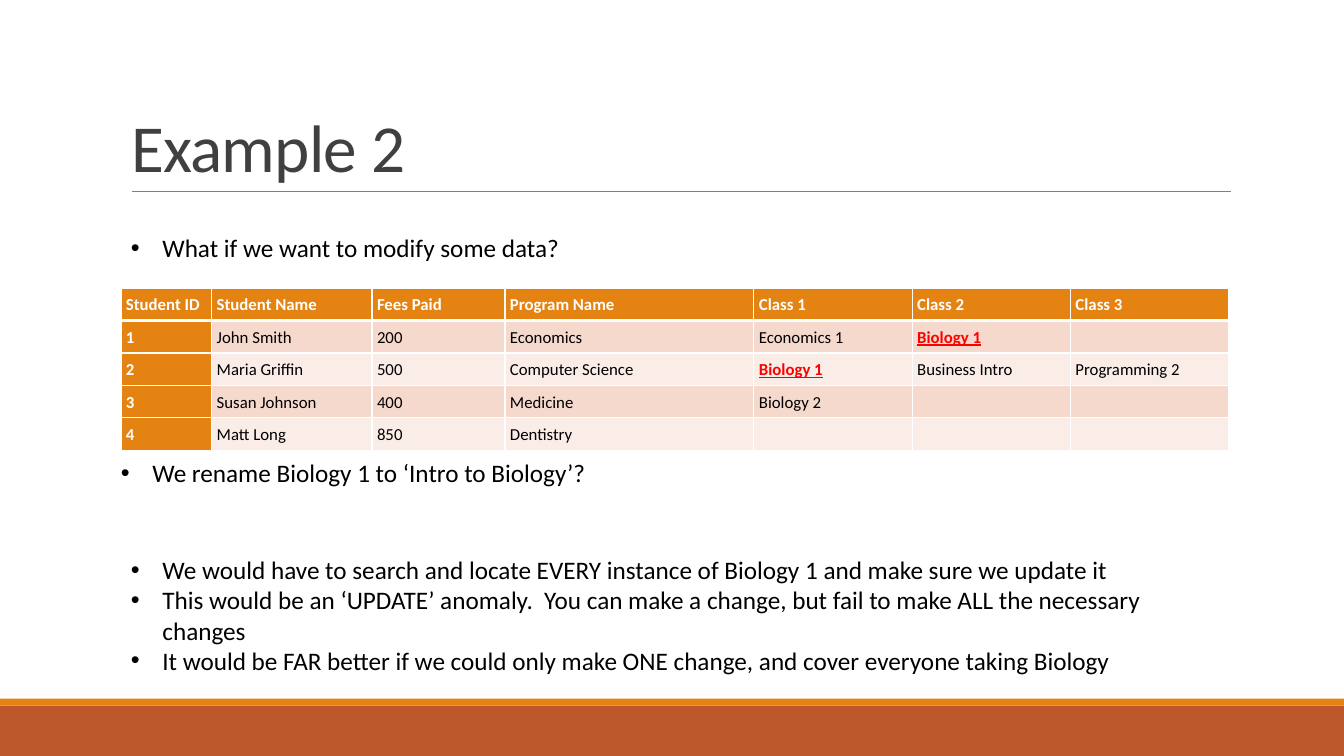
import dataclasses

import lxml.etree
import pptx
import pptx.dml.color
import pptx.enum.shapes
import pptx.enum.text
import pptx.oxml.ns
import pptx.util

Pt = pptx.util.Pt
qn = pptx.oxml.ns.qn
TEXT = pptx.enum.text


@dataclasses.dataclass(frozen=True)
class Theme:
    face: str = "Calibri"
    title: int = 48
    body: int = 18
    cell: int = 12
    black: str = "000000"
    white: str = "FFFFFF"
    dark: str = "404040"
    rule: str = "808080"
    alert: str = "FF0000"
    orange: str = "E48312"
    rust: str = "BD582C"
    bands: tuple = ("F5D9CC", "FAEDE7")


THEME = Theme()
WIDTH, HEIGHT = 960, 540
LEFT = 86.4
COLS = (64.8, 114.5, 95, 177.8, 113.1, 113.1, 113.1)
ROW = 23.2
STUDENTS = (
    ("Student ID", "Student Name", "Fees Paid", "Program Name",
     "Class 1", "Class 2", "Class 3"),
    ("1", "John Smith", "200", "Economics", "Economics 1", "Biology 1", ""),
    ("2", "Maria Griffin", "500", "Computer Science",
     "Biology 1", "Business Intro", "Programming 2"),
    ("3", "Susan Johnson", "400", "Medicine", "Biology 2", "", ""),
    ("4", "Matt Long", "850", "Dentistry", "", "", ""),
)
RENAMED = "Biology 1"
# left, top, width, height, lines
NOTES = (
    (LEFT, 162.7, 785, 29, ("What if we want to modify some data?",)),
    (79.2, 323.3, 785, 51, ("We rename Biology 1 to ‘Intro to Biology’?",)),
    (LEFT, 392.4, 785, 116.6, (
        "We would have to search and locate EVERY instance of Biology 1 "
        "and make sure we update it",
        "This would be an ‘UPDATE’ anomaly.  You can make a change, "
        "but fail to make ALL the necessary changes",
        "It would be FAR better if we could only make ONE change, "
        "and cover everyone taking Biology",
    )),
)


def rgb(code):
    return pptx.dml.color.RGBColor.from_string(code)


def assign(item, values):
    for name, value in values.items():
        setattr(item, name, value)


def paint(fill, color):
    fill.solid()
    fill.fore_color.rgb = rgb(color)


def write(para, text, size, color, **style):
    run = para.add_run()
    run.text = text
    assign(run.font, {"name": THEME.face, "size": Pt(size), **style})
    run.font.color.rgb = rgb(color)
    return run


def add_bar(slide, top, height, color):
    bar = slide.shapes.add_shape(
        pptx.enum.shapes.MSO_SHAPE.RECTANGLE,
        Pt(0), Pt(top), Pt(WIDTH), Pt(height))
    bar.shadow.inherit = False
    paint(bar.fill, color)
    bar.line.fill.background()


def add_rule(slide, left, right, top):
    rule = slide.shapes.add_connector(
        pptx.enum.shapes.MSO_CONNECTOR.STRAIGHT,
        Pt(left), Pt(top), Pt(right), Pt(top))
    rule.line.width = Pt(0.5)
    rule.line.color.rgb = rgb(THEME.rule)
    lxml.etree.SubElement(rule._element.spPr, qn("a:effectLst"))


def set_title(slide, text):
    title = slide.shapes.title
    assign(title, {"left": Pt(LEFT), "top": Pt(22.6),
                   "width": Pt(792), "height": Pt(114.2)})
    assign(title.text_frame, {
        "word_wrap": True, "auto_size": TEXT.MSO_AUTO_SIZE.NONE,
        "vertical_anchor": TEXT.MSO_ANCHOR.BOTTOM})
    para = title.text_frame.paragraphs[0]
    assign(para, {"alignment": TEXT.PP_ALIGN.LEFT, "line_spacing": 0.85})
    run = write(para, text, THEME.title, THEME.dark)
    run.font._element.set("spc", "-50")


def add_bullets(slide, left, top, width, height, lines):
    box = slide.shapes.add_textbox(Pt(left), Pt(top), Pt(width), Pt(height))
    frame = box.text_frame
    frame.word_wrap = True
    for index, line in enumerate(lines):
        para = frame.add_paragraph() if index else frame.paragraphs[0]
        write(para, line, THEME.body, THEME.black)
        props = para._p.get_or_add_pPr()
        assign_xml = {"marL": Pt(22.5), "indent": -Pt(22.5)}
        for name, value in assign_xml.items():
            props.set(name, str(int(value)))
        lxml.etree.SubElement(props, qn("a:buFont"), typeface="Arial")
        lxml.etree.SubElement(props, qn("a:buChar"), char="•")


def add_edges(cell, widths):
    """Draw white borders; widths maps L, R, T and B to points."""
    props = cell._tc.get_or_add_tcPr()
    for side, width in widths.items():
        edge = lxml.etree.SubElement(
            props, qn("a:ln" + side), w=str(int(Pt(width))))
        fill = lxml.etree.SubElement(edge, qn("a:solidFill"))
        lxml.etree.SubElement(fill, qn("a:srgbClr"), val=THEME.white)


def fill_cell(cell, text, row, col):
    assign(cell, {
        "margin_left": Pt(3.6), "margin_right": Pt(3.6),
        "margin_top": Pt(3.6), "margin_bottom": Pt(3.6),
        "vertical_anchor": TEXT.MSO_ANCHOR.MIDDLE})
    add_edges(cell, {"L": 1, "R": 1, "T": 3 if row == 1 else 1,
                     "B": 3 if row == 0 else 1})
    head = row == 0 or col == 0
    paint(cell.fill, THEME.orange if head else THEME.bands[(row - 1) % 2])
    para = cell.text_frame.paragraphs[0]
    para.line_spacing = 1.07
    if not text:
        # Keeps an empty cell from growing its row
        lxml.etree.SubElement(
            para._p, qn("a:endParaRPr"), sz=str(THEME.cell * 100))
        return
    marked = text == RENAMED
    color = THEME.white if head else THEME.alert if marked else THEME.black
    write(para, text, THEME.cell, color,
          bold=head or marked, underline=marked)


def add_grid(slide, left, top, rows):
    table = slide.shapes.add_table(
        len(rows), len(COLS), Pt(left), Pt(top),
        Pt(sum(COLS)), Pt(ROW * len(rows))).table
    for column, width in zip(table.columns, COLS):
        column.width = Pt(width)
    for row, texts in enumerate(rows):
        table.rows[row].height = Pt(ROW)
        for col, text in enumerate(texts):
            fill_cell(table.cell(row, col), text, row, col)


def main():
    deck = pptx.Presentation()
    assign(deck, {"slide_width": Pt(WIDTH), "slide_height": Pt(HEIGHT)})
    slide = deck.slides.add_slide(deck.slide_layouts[5])
    paint(slide.background.fill, THEME.white)
    add_bar(slide, 504, 36, THEME.rust)
    add_bar(slide, 499, 5, THEME.orange)
    add_rule(slide, 94.3, 879, 136.8)
    set_title(slide, "Example 2")
    add_grid(slide, LEFT, 205.7, STUDENTS)
    for note in NOTES:
        add_bullets(slide, *note)
    deck.save("out.pptx")


if __name__ == "__main__":
    main()
